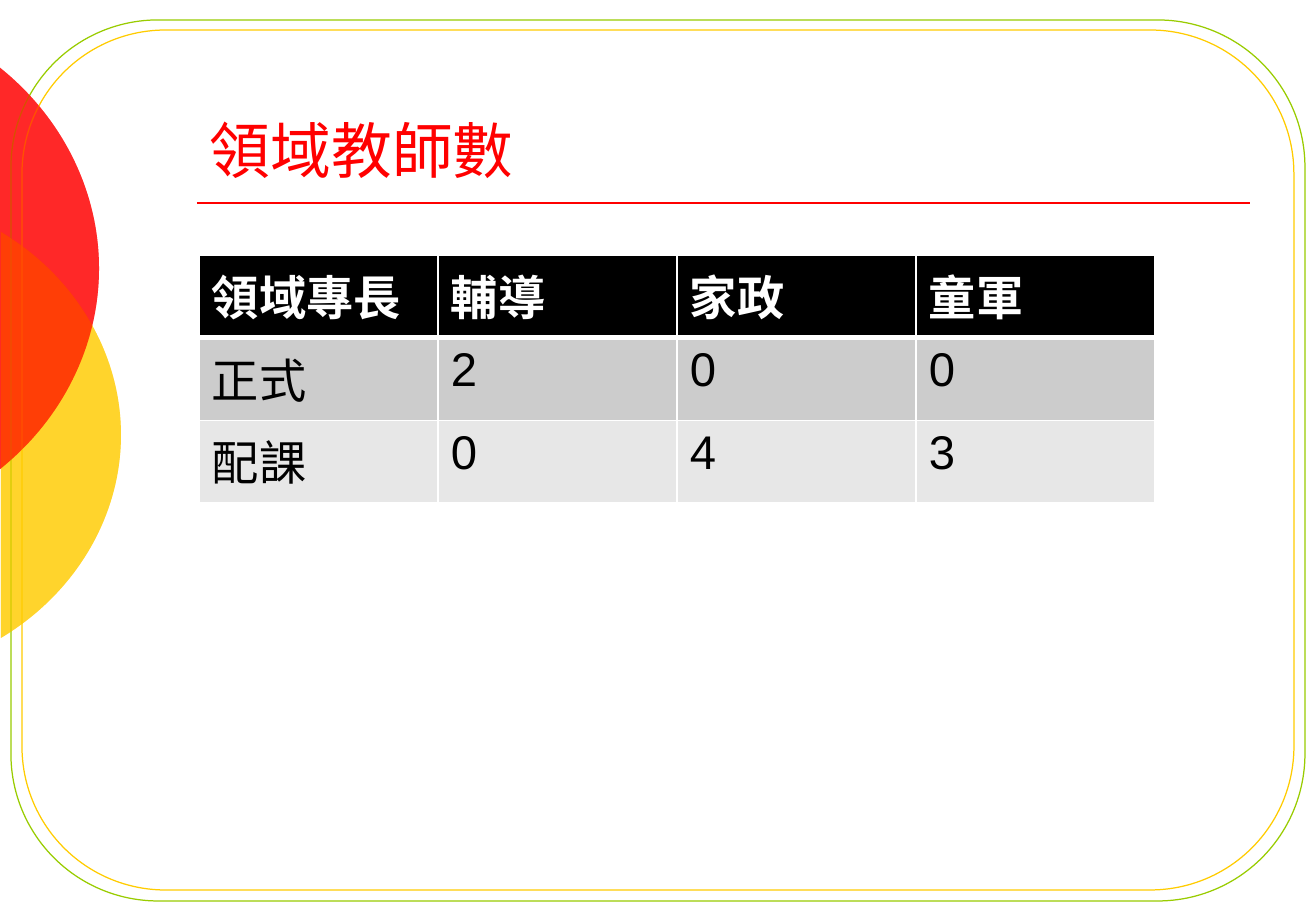
from dataclasses import dataclass

from lxml import etree
from pptx import Presentation
from pptx import util as u
from pptx.dml.color import RGBColor
from pptx.enum import shapes, text
from pptx.oxml.ns import qn

EMU_PER_PX = 7526


@dataclass(frozen=True)
class Theme:
    red: str = "FF0000"
    yellow: str = "FFCC00"
    green: str = "99CC00"
    white: str = "FFFFFF"
    black: str = "000000"
    row_fills: tuple = ("000000", "CCCCCC", "E7E7E7")
    title_font: str = "TeX Gyre Schola"
    table_font: str = "Arial"
    title_size: int = 36
    table_size: int = 28


THEME = Theme()

TEACHERS = [
    ["領域專長", "輔導", "家政", "童軍"],
    ["正式", "2", "0", "0"],
    ["配課", "0", "4", "3"],
]


def px(n):
    return u.Emu(round(n * EMU_PER_PX))


def rgb(color):
    return RGBColor.from_string(color)


def set_font(p, name, size, color, bold=False):
    p.font.name = name
    p.font.size = u.Pt(size)
    p.font.bold = bold
    p.font.color.rgb = rgb(color)


def add_disc(s, box, arc, color, opacity):
    """Disc in box, cut at the slide edge; arc is the upper curve, mirrored below."""
    left, top, width, height = box
    middle = top + height / 2
    lower = [(x, 2 * middle - y) for x, y in reversed(arc[:-1])]
    outline = [(px(x - left), px(y - top)) for x, y in arc + lower]
    builder = s.shapes.build_freeform(*outline[0], scale=1.0)
    builder.add_line_segments([outline[3], outline[6]], close=True)
    sp = builder.convert_to_shape()
    sp.left, sp.top, sp.width, sp.height = map(px, box)

    # Curves in place of the straight sides
    path = next(sp._element.iter(qn("a:path")))
    path.set("w", str(px(width)))
    path.set("h", str(px(height)))
    for child in list(path):
        path.remove(child)
    for tag, points in (("moveTo", outline[:1]), ("cubicBezTo", outline[1:4]),
                        ("cubicBezTo", outline[4:]), ("close", [])):
        step = etree.SubElement(path, qn(f"a:{tag}"))
        for x, y in points:
            etree.SubElement(step, qn("a:pt"), x=str(x), y=str(y))

    sp.shadow.inherit = False
    sp.fill.solid()
    sp.fill.fore_color.rgb = rgb(color)
    sp.line.fill.background()
    clr = sp._element.spPr.find(qn("a:solidFill")).find(qn("a:srgbClr"))
    etree.SubElement(clr, qn("a:alpha"), val=str(opacity * 1000))


def add_discs(s):
    add_disc(s, (-405, 192, 526, 486),
             [(1, 232), (76, 277), (121, 354), (121, 435)], THEME.yellow, 58)
    add_disc(s, (-482, 0, 581, 537),
             [(-1, 67), (62, 117), (99, 191), (99, 268.5)], THEME.red, 60)


def add_frame(s, left, top, width, height, color):
    sp = s.shapes.add_shape(shapes.MSO_SHAPE.ROUNDED_RECTANGLE,
                            px(left), px(top), px(width), px(height))
    sp.adjustments[0] = 0.167
    sp.shadow.inherit = False
    sp.fill.background()
    sp.line.color.rgb = rgb(color)
    sp.line.width = u.Pt(0.75)


def add_rule(s, left, right, y, color):
    line = s.shapes.add_connector(shapes.MSO_CONNECTOR.STRAIGHT,
                                  px(left), px(y), px(right), px(y))
    line.line.color.rgb = rgb(color)
    line.line.width = u.Pt(1)
    etree.SubElement(line._element.spPr, qn("a:effectLst"))


def add_title(s, left, top, width, height, words):
    tf = s.shapes.add_textbox(px(left), px(top), px(width), px(height)).text_frame
    tf.word_wrap = True
    tf.vertical_anchor = text.MSO_ANCHOR.BOTTOM
    p = tf.paragraphs[0]
    p.text = words
    set_font(p, THEME.title_font, THEME.title_size, THEME.red)


def set_borders(cell, widths, color):
    tc_pr = cell._tc.get_or_add_tcPr()
    for side, width in widths.items():
        ln = etree.SubElement(tc_pr, qn(f"a:ln{side}"), w=str(u.Pt(width)))
        fill = etree.SubElement(ln, qn("a:solidFill"))
        etree.SubElement(fill, qn("a:srgbClr"), val=color)


def add_table(s, left, top, width, height, rows):
    table = s.shapes.add_table(len(rows), len(rows[0]), px(left), px(top),
                               px(width), px(height)).table
    for i, row in enumerate(rows):
        header = i == 0
        for j, words in enumerate(row):
            cell = table.cell(i, j)
            cell.margin_left = cell.margin_right = px(13)
            cell.margin_top = cell.margin_bottom = px(6)
            if header:
                set_borders(cell, {"L": 1, "R": 1, "T": 1, "B": 3}, THEME.white)
            cell.fill.solid()
            cell.fill.fore_color.rgb = rgb(THEME.row_fills[i])
            p = cell.text_frame.paragraphs[0]
            p.text = words
            set_font(p, THEME.table_font, THEME.table_size,
                     THEME.white if header else THEME.black, header)


def main():
    prs = Presentation()
    prs.slide_width, prs.slide_height = px(1316), px(911)
    s = prs.slides.add_slide(prs.slide_layouts[6])

    # Backdrop: discs lie both under and over the frames
    add_discs(s)
    add_frame(s, 11, 20, 1294, 881, THEME.green)
    add_frame(s, 22, 30, 1272, 860, THEME.yellow)
    add_rule(s, 197, 1250, 203, THEME.red)
    add_discs(s)

    # Title and teacher counts
    add_title(s, 198, 40, 1052, 152, "領域教師數")
    add_table(s, 199, 255, 956, 248, TEACHERS)

    prs.save("out.pptx")


if __name__ == "__main__":
    main()
